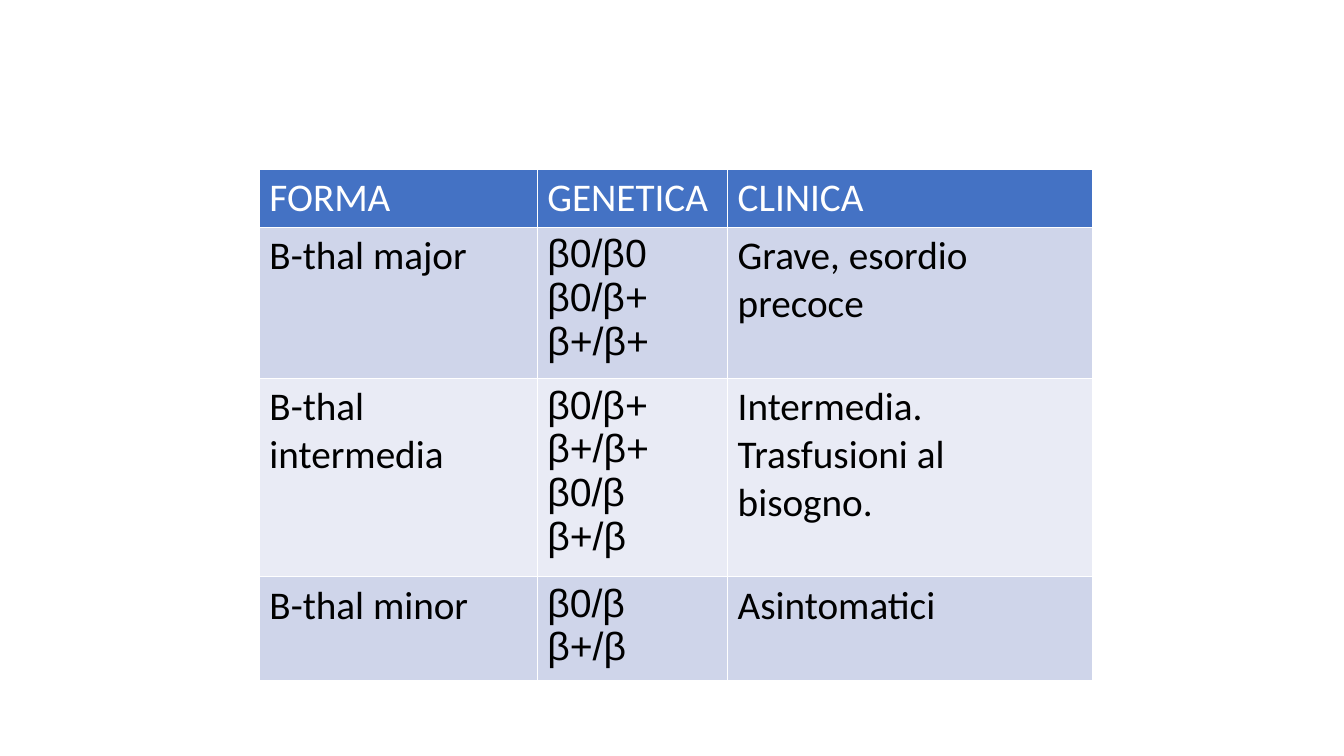
from dataclasses import dataclass

from lxml.etree import SubElement
from pptx import Presentation
from pptx.dml.color import RGBColor
from pptx.oxml.ns import qn
from pptx.util import Pt


@dataclass(frozen=True)
class Theme:
    header: str = "4472C4"
    bands: tuple = ("CFD5EA", "E9EBF5")
    light: str = "FFFFFF"
    dark: str = "000000"
    body_font: str = "Calibri"
    greek_font: str = "Arial"
    size: float = 28
    greek_spacing: float = 31.25
    border: float = 1


def write(tf, text, *, font, size, color, spacing=None):
    """Fill a text frame, one paragraph for each line of text."""
    for i, line in enumerate(text.split("\n")):
        p = tf.paragraphs[0] if i == 0 else tf.add_paragraph()
        if spacing:
            p.line_spacing = Pt(spacing)
        r = p.add_run()
        r.text = line
        r.font.name = font
        r.font.size = Pt(size)
        r.font.bold = False
        r.font.color.rgb = RGBColor.from_string(color)


class SlideBuilder:
    def __init__(self, s, theme):
        self.s = s
        self.theme = theme

    def borders(self, cell):
        tc_pr = cell._tc.get_or_add_tcPr()
        for side in ("lnL", "lnR", "lnT", "lnB"):
            ln = SubElement(tc_pr, qn(f"a:{side}"), w=str(Pt(self.theme.border)))
            fill = SubElement(ln, qn("a:solidFill"))
            SubElement(fill, qn("a:srgbClr"), val=self.theme.light)

    def table(self, rows, left, top, widths, heights, greek_column):
        t = self.theme
        frame = self.s.shapes.add_table(len(rows), len(widths), Pt(left), Pt(top),
                                        Pt(sum(widths)), Pt(sum(heights)))
        table = frame.table
        for column, width in zip(table.columns, widths):
            column.width = Pt(width)
        for i, (texts, height) in enumerate(zip(rows, heights)):
            table.rows[i].height = Pt(height)
            fill = t.bands[(i - 1) % 2] if i else t.header
            for j, text in enumerate(texts):
                cell = table.cell(i, j)
                self.borders(cell)
                cell.fill.solid()
                cell.fill.fore_color.rgb = RGBColor.from_string(fill)
                greek = i > 0 and j == greek_column
                write(cell.text_frame, text, size=t.size,
                      font=t.greek_font if greek else t.body_font,
                      color=t.dark if i else t.light,
                      spacing=t.greek_spacing if greek else None)


THALASSEMIA_FORMS = [
    ("FORMA", "GENETICA", "CLINICA"),
    ("B-thal major", "β0/β0\nβ0/β+\nβ+/β+", "Grave, esordio precoce"),
    ("B-thal intermedia", "β0/β+\nβ+/β+\nβ0/β\nβ+/β",
     "Intermedia.\nTrasfusioni al bisogno."),
    ("B-thal minor", "β0/β\nβ+/β", "Asintomatici"),
]


def main():
    prs = Presentation()
    prs.slide_width, prs.slide_height = Pt(960), Pt(540)
    s = prs.slides.add_slide(prs.slide_layouts[6])
    SlideBuilder(s, Theme()).table(
        THALASSEMIA_FORMS, left=185.3, top=121, widths=(198.5, 136, 260.5),
        heights=(40.5, 108, 141.5, 74.5), greek_column=1)
    prs.save("out.pptx")


if __name__ == "__main__":
    main()
